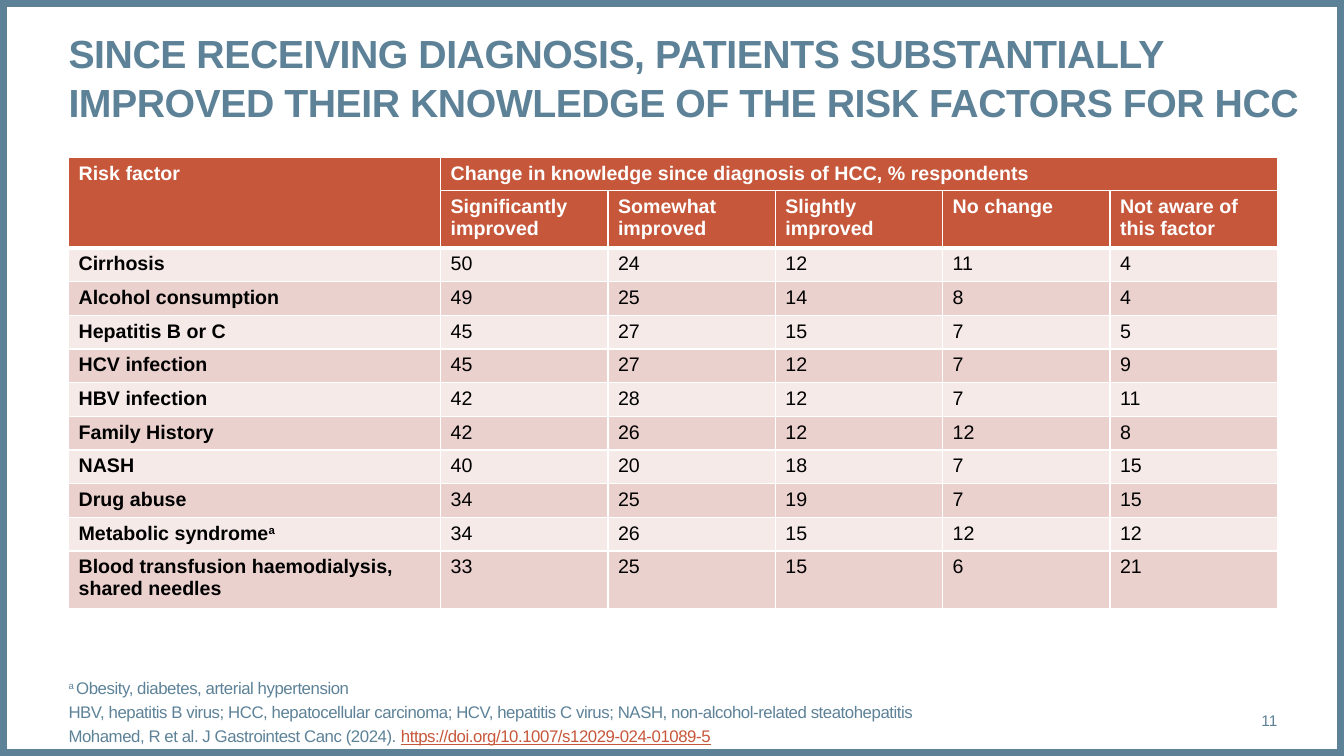
from dataclasses import dataclass

from lxml import etree
from pptx import Presentation
from pptx import util as u
from pptx.dml.color import RGBColor
from pptx.enum import shapes, text
from pptx.oxml.ns import qn


@dataclass(frozen=True)
class Theme:
    font: str = "Arial"
    slate: str = "5D8298"
    rust: str = "C6573B"
    white: str = "FFFFFF"
    black: str = "000000"
    bands: tuple = ("F5EAE8", "EAD1CE")
    title_size: int = 28
    table_size: int = 14
    note_size: int = 12
    number_size: int = 11


theme = Theme()


def add_text(paragraph, wording, size, color, bold=False, underline=False, raised=False, spacing=0):
    """Add one styled run per line; spacing is in hundredths of a point."""
    for index, line in enumerate(wording.split("\n")):
        if index:
            paragraph.add_line_break()
        run = paragraph.add_run()
        run.text = line
        run.font.name = theme.font
        run.font.size = u.Pt(size)
        run.font.bold = bold
        run.font.underline = underline
        run.font.color.rgb = RGBColor.from_string(color)
        properties = run.font._element
        if raised:
            properties.set("baseline", "30000")
        if spacing:
            properties.set("spc", str(spacing))


def add_frame(left, top, width, height, anchor):
    """Add a wrapping text box without margins and return its text frame."""
    box = slide.shapes.add_textbox(u.Inches(left), u.Inches(top), u.Inches(width), u.Inches(height))
    frame = box.text_frame
    frame.word_wrap = True
    frame.vertical_anchor = anchor
    frame.margin_left = frame.margin_right = frame.margin_top = frame.margin_bottom = 0
    return frame


deck = Presentation()
deck.slide_width, deck.slide_height = u.Inches(13.33), u.Inches(7.5)
slide = deck.slides.add_slide(deck.slide_layouts[6])

# Slide border
border = slide.shapes.add_shape(
    shapes.MSO_SHAPE.RECTANGLE, 0, 0, deck.slide_width, deck.slide_height)
border.shadow.inherit = False
border.fill.background()
border.line.color.rgb = RGBColor.from_string(theme.slate)
border.line.width = u.Pt(10)

# Title
title = add_frame(0.68, 0.28, 12.45, 0.95, text.MSO_ANCHOR.MIDDLE).paragraphs[0]
title.line_spacing = 1.05
add_text(title,
         "SINCE RECEIVING DIAGNOSIS, PATIENTS SUBSTANTIALLY\n"
         "IMPROVED THEIR KNOWLEDGE OF THE RISK FACTORS FOR HCC",
         theme.title_size, theme.slate, bold=True, spacing=-30)

# Risk factor table
headings = [
    ["Risk factor", "Change in knowledge since diagnosis of HCC, % respondents", "", "", "", ""],
    ["", "Significantly improved", "Somewhat improved", "Slightly\nimproved", "No change",
     "Not aware of\nthis factor"],
]
risk_factors = [
    ["Cirrhosis", 50, 24, 12, 11, 4],
    ["Alcohol consumption", 49, 25, 14, 8, 4],
    ["Hepatitis B or C", 45, 27, 15, 7, 5],
    ["HCV infection", 45, 27, 12, 7, 9],
    ["HBV infection", 42, 28, 12, 7, 11],
    ["Family History", 42, 26, 12, 12, 8],
    ["NASH", 40, 20, 18, 7, 15],
    ["Drug abuse", 34, 25, 19, 7, 15],
    ["Metabolic syndrome", 34, 26, 15, 12, 12],
    ["Blood transfusion haemodialysis, shared needles", 33, 25, 15, 6, 21],
]
rows = headings + risk_factors
header_count = len(headings)
column_widths = [3.69] + [1.66] * 5
row_heights = [0.32, 0.53] + [0.32] * 9 + [0.53]

table = slide.shapes.add_table(
    len(rows), len(column_widths), u.Inches(0.68), u.Inches(1.56),
    u.Inches(sum(column_widths)), u.Inches(sum(row_heights))).table
table.first_row = table.horz_banding = False
for column, width in zip(table.columns, column_widths):
    column.width = u.Inches(width)
for row, height in zip(table.rows, row_heights):
    row.height = u.Inches(height)
table.cell(0, 0).merge(table.cell(1, 0))
table.cell(0, 1).merge(table.cell(0, 5))

for row_index, values in enumerate(rows):
    is_header = row_index < header_count
    fill = theme.rust if is_header else theme.bands[(row_index - header_count) % 2]
    top_width = 3 if row_index == header_count else 1
    bottom_width = 3 if row_index == header_count - 1 else 1
    edges = {"a:lnL": 1, "a:lnR": 1, "a:lnT": top_width, "a:lnB": bottom_width}
    for column_index, value in enumerate(values):
        cell = table.cell(row_index, column_index)
        cell.fill.solid()
        cell.fill.fore_color.rgb = RGBColor.from_string(fill)
        cell_properties = cell._tc.get_or_add_tcPr()
        for position, (tag, width) in enumerate(edges.items()):
            edge = etree.Element(qn(tag), w=str(u.Pt(width)))
            edge_fill = etree.SubElement(edge, qn("a:solidFill"))
            etree.SubElement(edge_fill, qn("a:srgbClr"), val=theme.white)
            cell_properties.insert(position, edge)
        if value == "":
            continue
        paragraph = cell.text_frame.paragraphs[0]
        color = theme.white if is_header else theme.black
        bold = is_header or column_index == 0
        add_text(paragraph, str(value), theme.table_size, color, bold=bold)
        if value == "Metabolic syndrome":
            add_text(paragraph, "a", theme.table_size, color, bold=True, raised=True)

# Slide number
number = add_frame(11.81, 6.95, 0.86, 0.4, text.MSO_ANCHOR.MIDDLE).paragraphs[0]
number.alignment = text.PP_ALIGN.RIGHT
add_text(number, "11", theme.number_size, theme.slate)

# Footnotes: each line is a list of (wording, style) pieces
footnotes = [
    [("a ", {"raised": True}), ("Obesity, diabetes, arterial hypertension", {})],
    [("HBV, hepatitis B virus; HCC, hepatocellular carcinoma; HCV, hepatitis C virus; "
      "NASH, non-alcohol-related steatohepatitis", {})],
    [("Mohamed, R et al. J Gastrointest Canc (2024). ", {}),
     ("https://doi.org/10.1007/s12029-024-01089-5", {"color": theme.rust, "underline": True})],
]
notes_frame = add_frame(0.68, 6.72, 11.13, 0.7, text.MSO_ANCHOR.TOP)
for index, pieces in enumerate(footnotes):
    if index:
        note = notes_frame.add_paragraph()
        note.space_before = u.Pt(3)
    else:
        note = notes_frame.paragraphs[0]
    for wording, style in pieces:
        add_text(note, wording, **{"size": theme.note_size, "color": theme.slate,
                                   "spacing": -30, **style})

deck.save("out.pptx")
